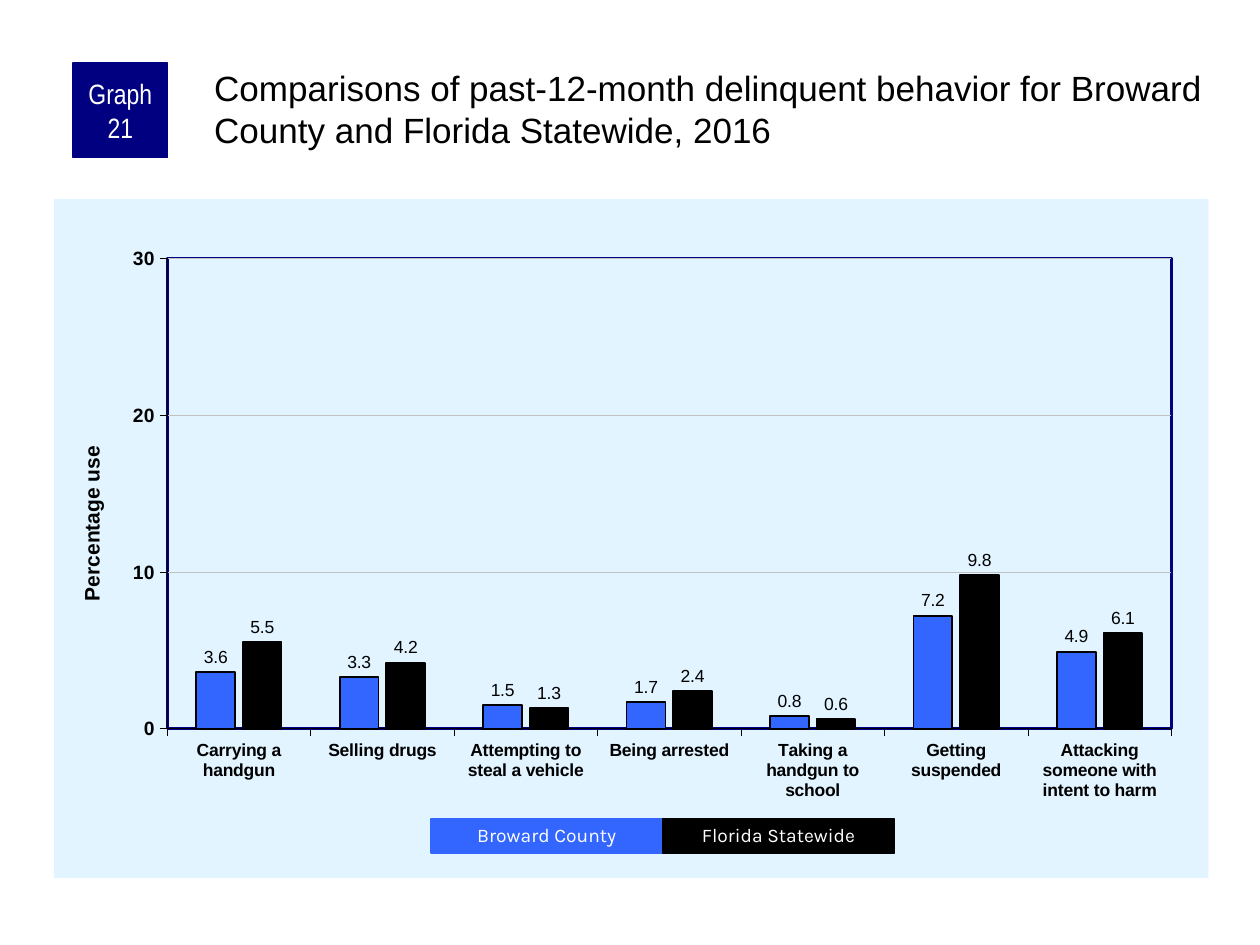
"""Build the Graph 21 slide comparing delinquent behavior in Broward County and Florida."""
from lxml.etree import fromstring
from pptx import Presentation
from pptx.chart.data import CategoryChartData
from pptx.dml.color import RGBColor
from pptx.enum.chart import XL_CHART_TYPE, XL_LABEL_POSITION, XL_TICK_MARK
from pptx.enum.shapes import MSO_SHAPE
from pptx.enum.text import MSO_ANCHOR, MSO_AUTO_SIZE, PP_ALIGN
from pptx.util import Emu, Pt

SCALE = 9144
NAVY, BLUE, BLACK, WHITE = "000080", "3366FF", "000000", "FFFFFF"
NAMESPACES = (
    'xmlns:c="http://schemas.openxmlformats.org/drawingml/2006/chart" '
    'xmlns:a="http://schemas.openxmlformats.org/drawingml/2006/main"'
)


def color(value):
    return RGBColor.from_string(value)


def style(font, size, name="Arial", fill=BLACK, bold=False):
    font.size, font.name, font.bold = Pt(size), name, bold
    font.color.rgb = color(fill)


deck = Presentation()
deck.slide_width, deck.slide_height = Emu(1000 * SCALE), Emu(750 * SCALE)
page = deck.slides.add_slide(deck.slide_layouts[5])

title = page.shapes.title
title.left, title.top, title.width, title.height = [Emu(n * SCALE) for n in (167, 50, 792, 83)]
frame = title.text_frame
frame.text = "Comparisons of past-12-month delinquent behavior for Broward County and Florida Statewide, 2016"
frame.word_wrap, frame.auto_size = True, MSO_AUTO_SIZE.NONE
frame.vertical_anchor = MSO_ANCHOR.TOP
frame.margin_left = frame.margin_top = Emu(3 * SCALE)
frame.margin_right = frame.margin_bottom = 0
frame.paragraphs[0].alignment = PP_ALIGN.LEFT
style(frame.paragraphs[0].runs[0].font, 20)

data = CategoryChartData(number_format="0.0")
data.categories = [
    "Carrying a handgun", "Selling drugs", "Attempting to steal a vehicle", "Being arrested",
    "Taking a handgun to school", "Getting suspended", "Attacking someone with intent to harm",
]
data.add_series("Series 1", (3.6, 3.3, 1.5, 1.7, 0.8, 7.2, 4.9))
data.add_series("Series 2", (5.5, 4.2, 1.3, 2.4, 0.6, 9.8, 6.1))
chart = page.shapes.add_chart(
    XL_CHART_TYPE.COLUMN_CLUSTERED, *[Emu(n * SCALE) for n in (43, 158, 916, 539)], data
).chart
chart.has_legend = chart.has_title = False
style(chart.font, 11.5)

plot = chart.plots[0]
plot.gap_width, plot.overlap, plot.vary_by_categories = 150, -20, False
for series, fill in zip(plot.series, (BLUE, BLACK)):
    series.format.fill.solid()
    series.format.fill.fore_color.rgb = color(fill)
    series.format.line.color.rgb = color(BLACK)
    series.format.line.width = Pt(1)
    labels = series.data_labels
    labels.show_value = True
    labels.number_format, labels.number_format_is_linked = "0.0", False
    labels.position = XL_LABEL_POSITION.OUTSIDE_END
    style(labels.font, 10)

for axis, size in ((chart.category_axis, 10), (chart.value_axis, 11)):
    axis.major_tick_mark, axis.minor_tick_mark = XL_TICK_MARK.OUTSIDE, XL_TICK_MARK.NONE
    axis.format.line.color.rgb = color(BLACK)
    axis.format.line.width = Pt(0.25)
    style(axis.tick_labels.font, size, bold=True)

scale_axis = chart.value_axis
scale_axis.minimum_scale, scale_axis.maximum_scale, scale_axis.major_unit = 0, 30, 10
scale_axis.tick_labels.number_format, scale_axis.tick_labels.number_format_is_linked = "0", False
scale_axis.major_gridlines.format.line.color.rgb = color("C0C0C0")
scale_axis.major_gridlines.format.line.width = Pt(0.25)
axis_frame = scale_axis.axis_title.text_frame
axis_frame.text = "Percentage use"
axis_frame._txBody.bodyPr.set("rot", "-5400000")
style(axis_frame.paragraphs[0].runs[0].font, 12, bold=True)

plot_area = chart._chartSpace.chart.plotArea
for layout in plot_area.xpath("c:layout"):
    plot_area.remove(layout)
plot_area.insert(0, fromstring(
    f'<c:layout {NAMESPACES}><c:manualLayout><c:layoutTarget val="inner"/>'
    '<c:xMode val="edge"/><c:yMode val="edge"/>'
    '<c:x val="0.098"/><c:y val="0.087"/><c:w val="0.87"/><c:h val="0.693"/>'
    '</c:manualLayout></c:layout>'
))
plot_area.append(fromstring(
    f'<c:spPr {NAMESPACES}><a:noFill/><a:ln w="19050"><a:solidFill>'
    f'<a:srgbClr val="{NAVY}"/></a:solidFill></a:ln></c:spPr>'
))
chart._chartSpace.chart.addnext(fromstring(
    f'<c:spPr {NAMESPACES}><a:solidFill><a:srgbClr val="E1F4FF"/></a:solidFill>'
    '<a:ln><a:noFill/></a:ln></c:spPr>'
))

boxes = (
    ("Graph 21", (58, 50, 75, 75), NAVY, 16, "Arial Narrow", 5, 1.0),
    ("Broward County", (342, 650, 184, 27), BLUE, 11, "Karla", 10, 0.9),
    ("Florida Statewide", (526, 650, 184, 27), BLACK, 11, "Karla", 10, 0.9),
)
for text, place, fill, size, font_name, margin, spacing in boxes:
    box = page.shapes.add_shape(MSO_SHAPE.RECTANGLE, *[Emu(n * SCALE) for n in place])
    box.shadow.inherit = False
    box.fill.solid()
    box.fill.fore_color.rgb = color(fill)
    box.line.color.rgb = color(fill)
    box.line.width = Pt(0.75)
    frame = box.text_frame
    frame.text = text
    frame.word_wrap, frame.vertical_anchor = True, MSO_ANCHOR.MIDDLE
    frame.margin_left = frame.margin_right = Emu(margin * SCALE)
    frame.margin_top = frame.margin_bottom = 0
    para = frame.paragraphs[0]
    para.alignment, para.line_spacing = PP_ALIGN.CENTER, spacing
    style(para.runs[0].font, size, font_name, WHITE)

deck.save("out.pptx")
